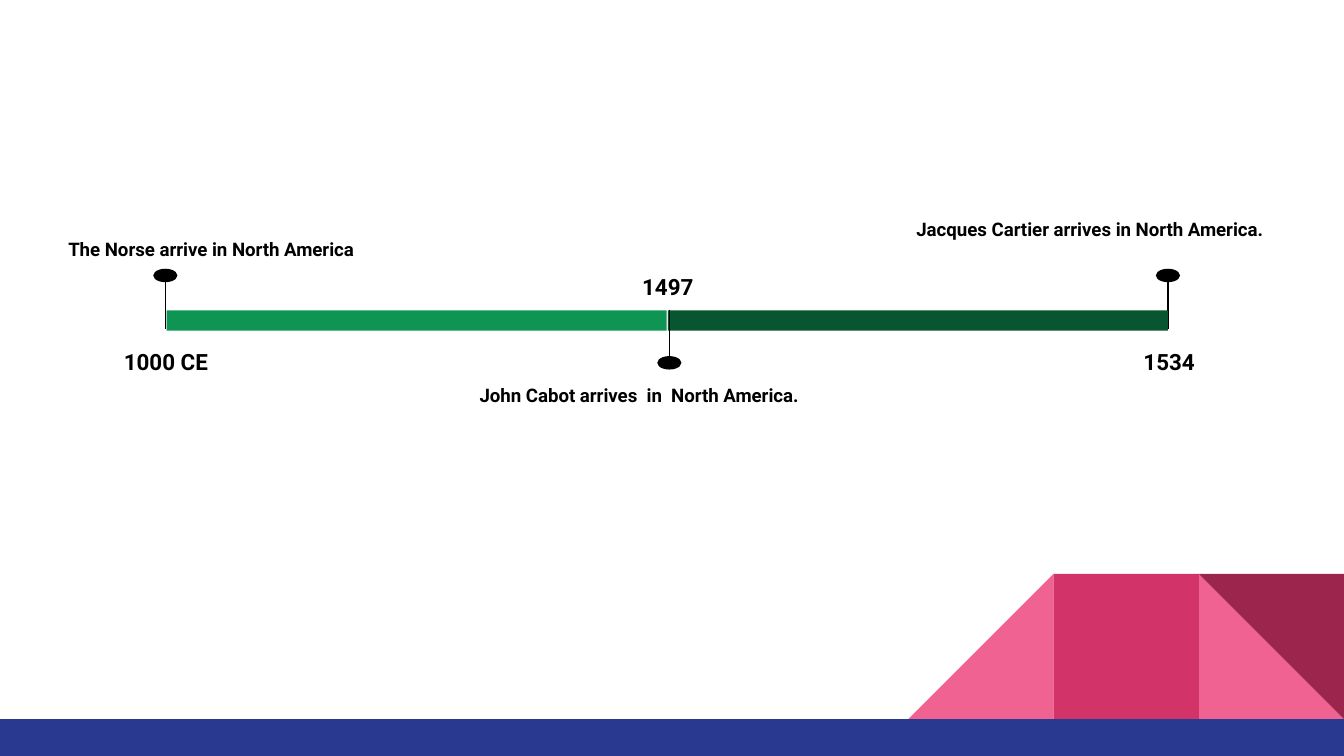
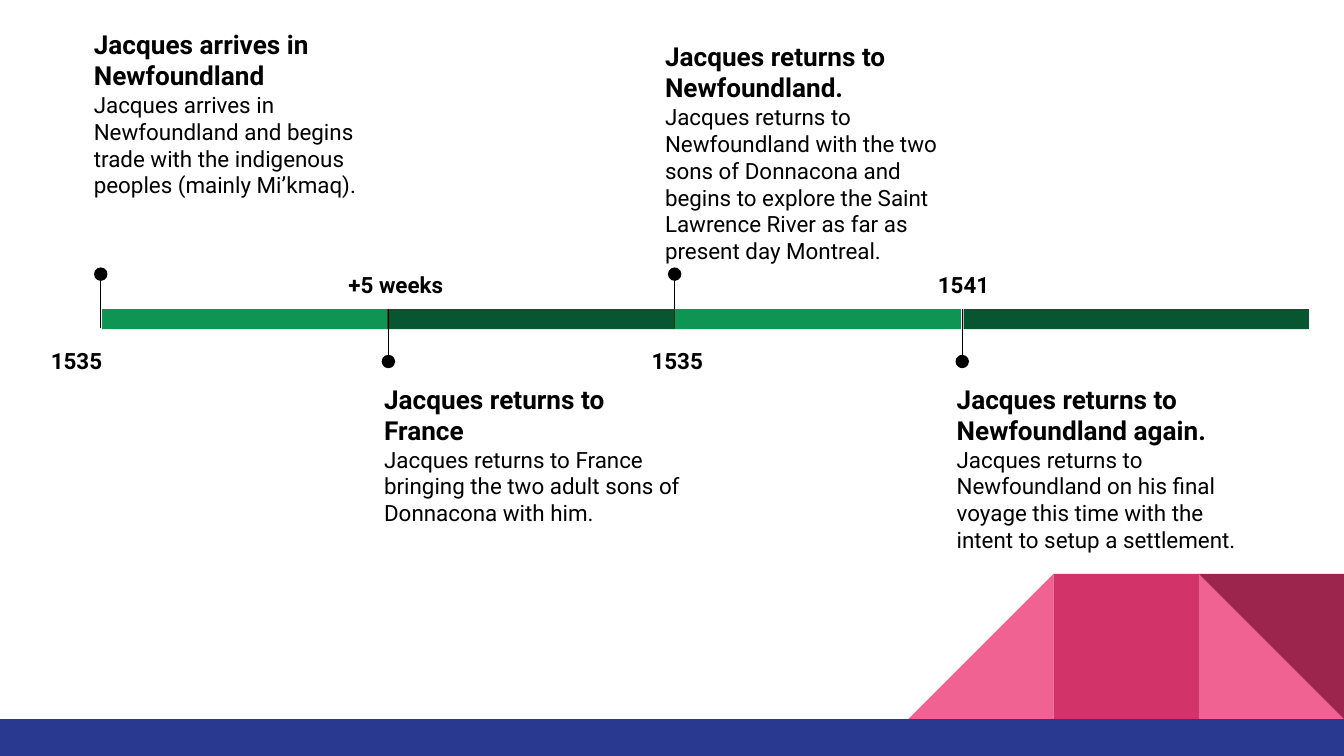
from lxml.etree import SubElement
from pptx import Presentation
from pptx.dml.color import RGBColor
from pptx.enum.shapes import MSO_CONNECTOR as Connector, MSO_SHAPE as Shape
from pptx.enum.text import MSO_ANCHOR as Anchor, PP_ALIGN as Align
from pptx.oxml.ns import qn
from pptx.util import Inches, Pt

WIDTH = 10
HEIGHT = WIDTH * 9 / 16
FONT = "Roboto"
BLACK, BLUE = "000000", "2A3990"
PINK, ROSE, WINE = "F06292", "D23369", "9C254D"
LIGHT_GREEN, DARK_GREEN = "0E9453", "085631"
BAND_TOP = 5.35
TILE = 1.08
BAR_HEIGHT = 0.15
YEAR_HEIGHT = 0.41

TILES = [
    (1, Shape.RIGHT_TRIANGLE, PINK, 0, False),
    (3, Shape.RIGHT_TRIANGLE, PINK, 0, True),
    (2, Shape.RECTANGLE, ROSE, 0, False),
    (1, Shape.RIGHT_TRIANGLE, WINE, 180, False),
]

TIMELINES = [
    {
        "bar_top": 2.31, "dot_width": 0.18, "sizes": [10], "anchor": Anchor.MIDDLE,
        "events": [
            {"pin": 8.69, "up": True, "year": "1534 ", "year_at": (8.06, 1.32),
             "story": ["Jacques Cartier arrives in North America."],
             "story_at": (6.72, 1.5, 3.06, 0.41)},
            {"pin": 1.23, "up": True, "bar": (1.24, 3.72, LIGHT_GREEN),
             "year": "1000 CE", "year_at": (0.41, 1.65),
             "story": ["The Norse arrive in North America"],
             "story_at": (0.41, 1.65, 2.77, 0.41)},
            {"pin": 4.98, "up": False, "bar": (4.97, 3.72, DARK_GREEN),
             "year": "1497 ", "year_at": (4.28, 1.42),
             "story": ["John Cabot arrives  in  North America."],
             "story_at": (3.47, 2.75, 3.03, 0.38)},
        ],
    },
    {
        "bar_top": 2.3, "dot_width": 0.1, "sizes": [14, 12], "anchor": Anchor.TOP,
        "events": [
            {"pin": 5.02, "up": True, "bar": (5.01, 2.14, LIGHT_GREEN),
             "year": "1535", "year_at": (4.66, 0.76),
             "story": ["Jacques returns to Newfoundland.",
                       "Jacques returns to Newfoundland with the two sons of Donnacona and "
                       "begins to explore the Saint Lawrence River as far as present day Montreal."],
             "story_at": (4.85, 0.2, 2.46, 1.03)},
            {"pin": 7.16, "up": False, "bar": (7.17, 2.57, DARK_GREEN),
             "year": "1541", "year_at": (6.76, 0.82),
             "story": ["Jacques returns to Newfoundland again.",
                       "Jacques returns to Newfoundland on his final voyage this time with "
                       "the intent to setup a settlement."],
             "story_at": (7.02, 2.75, 2.46, 1.03)},
            {"pin": 0.75, "up": True, "bar": (0.76, 2.14, LIGHT_GREEN),
             "year": "1535", "year_at": (0.28, 0.68), "year_align": Align.LEFT,
             "story": ["Jacques arrives in Newfoundland",
                       "Jacques arrives in Newfoundland and begins trade with the "
                       "indigenous peoples (mainly Mi’kmaq)."],
             "story_at": (0.6, 0.11, 2.46, 1.03)},
            {"pin": 2.89, "up": False, "bar": (2.88, 2.14, DARK_GREEN),
             "year": "+5 weeks", "year_at": (2.49, 0.91),
             "story": ["Jacques returns to France",
                       "Jacques returns to France bringing the two adult sons of "
                       "Donnacona with him."],
             "story_at": (2.76, 2.75, 2.46, 1.73)},
        ],
    },
]


def color(value):
    return RGBColor.from_string(value)


def add_block(page, kind, left, top, width, height, fill):
    block = page.shapes.add_shape(kind, Inches(left), Inches(top), Inches(width), Inches(height))
    block.shadow.inherit = False
    block.fill.solid()
    block.fill.fore_color.rgb = color(fill)
    block.line.fill.background()
    return block


def add_line(page, x, top, bottom):
    line = page.shapes.add_connector(
        Connector.STRAIGHT, Inches(x), Inches(top), Inches(x), Inches(bottom))
    line.line.color.rgb = color(BLACK)
    line.line.width = Pt(0.75)
    SubElement(line.element.spPr, qn("a:effectLst"))


def add_text(page, texts, place, sizes, align=Align.LEFT, anchor=Anchor.TOP, spacing=1.0, after=0):
    box = page.shapes.add_textbox(*[Inches(length) for length in place])
    frame = box.text_frame
    frame.word_wrap = True
    frame.vertical_anchor = anchor
    frame.margin_left = frame.margin_right = Inches(0.1)
    frame.margin_top = frame.margin_bottom = Inches(0.1)
    for index, (text, size) in enumerate(zip(texts, sizes)):
        para = frame.add_paragraph() if index else frame.paragraphs[0]
        para.alignment = align
        para.line_spacing = spacing
        para.space_after = Pt(after)
        span = para.add_run()
        span.text = text
        span.font.name = FONT
        span.font.size = Pt(size)
        span.font.bold = index == 0
        span.font.color.rgb = color(BLACK)


def decorate_layout(layout, page):
    for placeholder in list(layout.placeholders):
        layout.shapes.element.remove(placeholder.element)
    parts = []
    for from_right, kind, fill, rotation, flipped in TILES:
        tile = add_block(page, kind, WIDTH - from_right * TILE, BAND_TOP - TILE, TILE, TILE, fill)
        tile.rotation = rotation
        if flipped:
            tile.element.spPr.find(qn("a:xfrm")).set("flipH", "1")
        parts.append(tile)
    parts.append(add_block(page, Shape.RECTANGLE, 0, BAND_TOP, WIDTH, HEIGHT - BAND_TOP, BLUE))
    for part in parts:
        layout.shapes.element.append(part.element)


def draw_event(page, timeline, event):
    bar_top, dot_width, x = timeline["bar_top"], timeline["dot_width"], event["pin"]
    if "bar" in event:
        left, width, fill = event["bar"]
        add_block(page, Shape.RECTANGLE, left, bar_top, width, BAR_HEIGHT, fill)
    if event["up"]:
        pin_top, pin_bottom = bar_top - 0.25, bar_top + 0.14
        dot_top, year_top = bar_top - 0.31, bar_top + BAR_HEIGHT
    else:
        pin_top, pin_bottom = bar_top, bar_top + 0.38
        dot_top, year_top = bar_top + 0.34, bar_top - YEAR_HEIGHT
    add_line(page, x, pin_top, pin_bottom)
    add_block(page, Shape.OVAL, x - dot_width / 2, dot_top, dot_width, 0.1, BLACK)
    left, width = event["year_at"]
    add_text(page, [event["year"]], (left, year_top, width, YEAR_HEIGHT), [12],
             align=event.get("year_align", Align.CENTER), spacing=1.15, after=16)
    add_text(page, event["story"], event["story_at"], timeline["sizes"],
             anchor=timeline["anchor"])


def main():
    deck = Presentation()
    deck.slide_width, deck.slide_height = Inches(WIDTH), Inches(HEIGHT)
    layout = deck.slide_layouts.get_by_name("Blank")
    pages = [deck.slides.add_slide(layout) for _ in TIMELINES]
    decorate_layout(layout, pages[0])
    for page, timeline in zip(pages, TIMELINES):
        for event in timeline["events"]:
            draw_event(page, timeline, event)
    deck.save("out.pptx")


if __name__ == "__main__":
    main()
